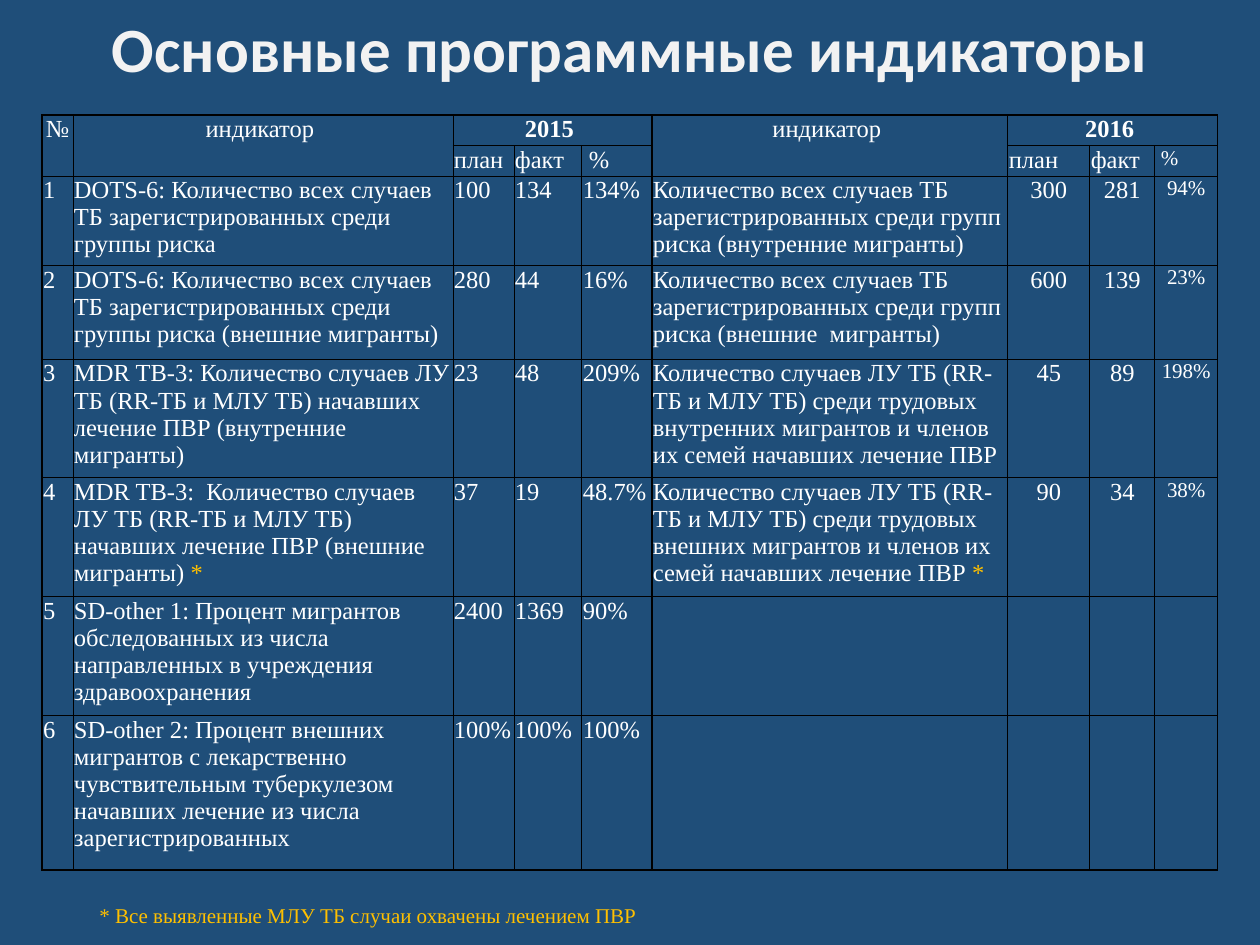
import lxml.etree
import pptx
import pptx.dml.color
import pptx.enum.text
import pptx.oxml.ns
import pptx.util

PX = 914400 // 126
RGB = pptx.dml.color.RGBColor
ALIGN = pptx.enum.text.PP_ALIGN
NAVY = RGB(0x1F, 0x4E, 0x79)
PALE = RGB(0xF2, 0xF2, 0xF2)
WHITE = RGB(0xFF, 0xFF, 0xFF)
GOLD = RGB(0xFF, 0xC0, 0x00)
BLACK = RGB(0x00, 0x00, 0x00)
SERIF = "Times New Roman"

TITLE = "Основные программные индикаторы"
FOOTNOTE = "* Все выявленные МЛУ ТБ случаи охвачены лечением ПВР"

ROWS = [
    [""] * 9,
    ["№", "индикатор ", "2015\u00a0", "", "", "индикатор ", "2016\u00a0", "", ""],
    ["", "", "план", "факт", " %", "", "план", "факт", " %"],
    ["1", "DOTS-6: Количество всех случаев ТБ зарегистрированных среди группы риска",
     "100", "134", "134%",
     "Количество всех случаев ТБ зарегистрированных среди групп риска (внутренние мигранты)",
     "300", "281", "94%"],
    ["2", "DOTS-6: Количество всех случаев ТБ зарегистрированных среди группы риска (внешние мигранты)",
     "280", "44", "16%",
     "Количество всех случаев ТБ зарегистрированных среди групп риска (внешние  мигранты)",
     "600", "139", "23%"],
    ["3", "MDR TB-3: Количество случаев ЛУ ТБ (RR-TБ и МЛУ ТБ) начавших лечение ПВР (внутренние мигранты)",
     "23", "48", "209%",
     "Количество случаев ЛУ ТБ (RR-TБ и МЛУ ТБ) среди трудовых внутренних мигрантов "
     "и членов их семей начавших лечение ПВР",
     "45", "89", "198%"],
    ["4", "MDR TB-3:  Количество случаев ЛУ ТБ (RR-TБ и МЛУ ТБ) начавших лечение ПВР (внешние мигранты) *",
     "37", "19", "48.7%",
     "Количество случаев ЛУ ТБ (RR-TБ и МЛУ ТБ) среди трудовых внешних мигрантов "
     "и членов их семей начавших лечение ПВР *",
     "90", "34", "38%"],
    ["5", "SD-other 1: Процент мигрантов обследованных из числа направленных в учреждения здравоохранения",
     "2400", "1369", "90%", "", "", "", ""],
    ["6", "SD-other 2: Процент внешних мигрантов с лекарственно чувствительным туберкулезом "
     "начавших лечение из числа зарегистрированных",
     "100%", "100%", "100%", "", "", "", ""],
]
COLUMN_WIDTHS = [31, 380, 61, 68, 70, 356, 82, 65, 63]
ROW_HEIGHTS = [21, 28, 28, 89, 94, 109, 109, 109, 155]
MERGES = [(0, 0, 0, 8), (1, 0, 2, 0), (1, 1, 2, 1), (1, 2, 1, 4), (1, 5, 2, 5), (1, 6, 1, 8)]
BLOCK_STARTS, BLOCK_ENDS = (0, 5), (4, 8)
SPACER_ROW, HEADER_ROW, SUBHEADER_ROW, LAST_ROW = 0, 1, 2, 8


def write(frame, text, size=14, font=SERIF, color=WHITE, bold=False, align=ALIGN.LEFT, spacing=None):
    """Fill the first paragraph; a closing asterisk is set in gold."""
    paragraph = frame.paragraphs[0]
    paragraph.alignment = align
    if spacing:
        paragraph.line_spacing = spacing
    body = text.removesuffix("*")
    for part, part_color in ((body, color), (text[len(body):], GOLD)):
        if part:
            run = paragraph.add_run()
            run.text = part
            run.font.size = pptx.util.Pt(size)
            run.font.name = font
            run.font.bold = bold
            run.font.color.rgb = part_color


def add_text_box(slide, left, top, width, height, wrap, anchor, text, **text_format):
    frame = slide.shapes.add_textbox(left * PX, top * PX, width * PX, height * PX).text_frame
    frame.word_wrap = wrap
    frame.vertical_anchor = anchor
    write(frame, text, **text_format)


def add_xml(parent, tag, **attributes):
    return lxml.etree.SubElement(parent, pptx.oxml.ns.qn(tag), **attributes)


def draw_borders(cell, row, column):
    """Thick lines frame each year's block, thin ones divide it; the spacer row has only a bottom line."""
    last_row = row + cell.span_height - 1 if cell.is_merge_origin else row
    last_column = column + cell.span_width - 1 if cell.is_merge_origin else column
    thick = {
        "L": column in BLOCK_STARTS,
        "R": last_column in BLOCK_ENDS,
        "T": row == HEADER_ROW,
        "B": last_row in (SPACER_ROW, LAST_ROW),
    }
    properties = cell._tc.get_or_add_tcPr()
    for side, is_thick in thick.items():
        width = pptx.util.Pt(1 if is_thick else 0.5)
        line = add_xml(properties, f"a:ln{side}", w=str(width))
        if row == SPACER_ROW and side != "B":
            add_xml(line, "a:noFill")
        else:
            add_xml(add_xml(line, "a:solidFill"), "a:srgbClr", val=str(BLACK))


def add_indicator_table(slide):
    table = slide.shapes.add_table(
        len(ROWS), len(COLUMN_WIDTHS), 42 * PX, 94 * PX,
        sum(COLUMN_WIDTHS) * PX, sum(ROW_HEIGHTS) * PX).table
    table.first_row = table.horz_banding = False
    for column, width in zip(table.columns, COLUMN_WIDTHS):
        column.width = width * PX
    for row, height in zip(table.rows, ROW_HEIGHTS):
        row.height = height * PX
    for top, left, bottom, right in MERGES:
        table.cell(top, left).merge(table.cell(bottom, right))

    for r, texts in enumerate(ROWS):
        for c, text in enumerate(texts):
            cell = table.cell(r, c)
            cell.margin_left = cell.margin_right = cell.margin_top = PX
            cell.margin_bottom = 0
            draw_borders(cell, r, c)
            cell.fill.background()
            if text:
                centred = r == HEADER_ROW or (r > SUBHEADER_ROW and c >= 6)
                write(cell.text_frame, text, size=12 if c == 8 else 14,
                      bold=r == HEADER_ROW and c in (2, 6),
                      align=ALIGN.CENTER if centred else ALIGN.LEFT)
            else:
                add_xml(cell.text_frame.paragraphs[0]._p, "a:endParaRPr", sz="800")


def main():
    deck = pptx.Presentation()
    deck.slide_width, deck.slide_height = 1260 * PX, 945 * PX
    slide = deck.slides.add_slide(deck.slide_layouts[6])
    slide.background.fill.solid()
    slide.background.fill.fore_color.rgb = NAVY

    middle, top = pptx.enum.text.MSO_ANCHOR.MIDDLE, pptx.enum.text.MSO_ANCHOR.TOP
    add_text_box(slide, 87, 10, 1086, 84, True, middle, TITLE, size=36, font="Calibri",
                 color=PALE, bold=True, align=ALIGN.CENTER, spacing=0.9)
    add_indicator_table(slide)
    add_text_box(slide, 87, 896, 568, 38, False, top, FOOTNOTE, size=12, color=GOLD)
    deck.save("out.pptx")


if __name__ == "__main__":
    main()
